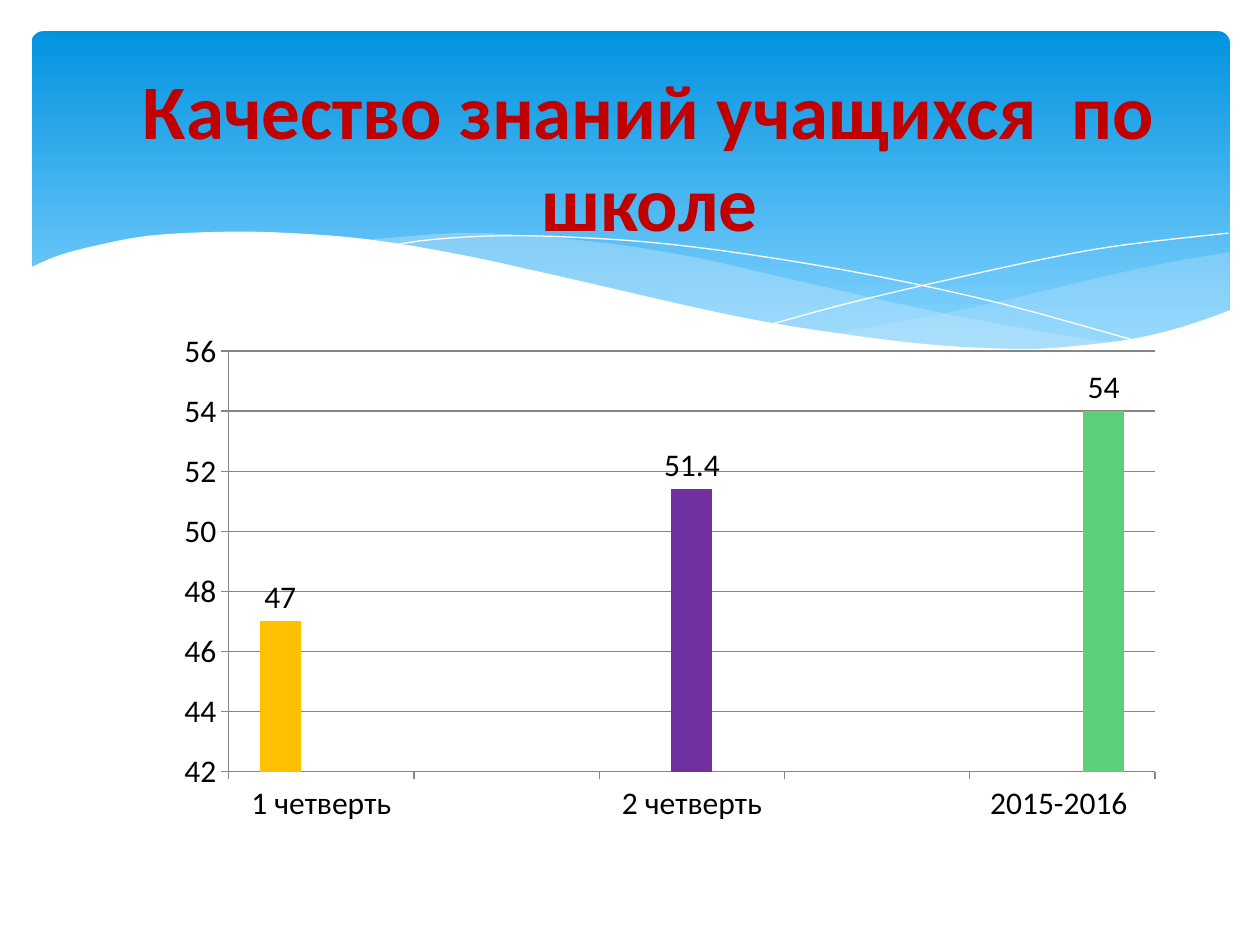
import pptx
import pptx.util
import pptx.chart.data
import pptx.dml.color
import pptx.enum.chart
import pptx.enum.shapes
import pptx.enum.text
import pptx.oxml.ns
import lxml.etree

W, H = pptx.util.Inches(10), pptx.util.Inches(7.5)
FONT = "Calibri"


def paint(fill, color, alpha=100):
    fill.solid()
    fill.fore_color.rgb = pptx.dml.color.RGBColor.from_string(color)
    if alpha < 100:
        clr = fill._xPr.find(".//" + pptx.oxml.ns.qn("a:srgbClr"))
        lxml.etree.SubElement(clr, pptx.oxml.ns.qn("a:alpha"), val=str(alpha * 1000))


def write(tf, text, size, color, bold=False, align="CENTER"):
    tf.word_wrap = True
    tf.vertical_anchor = pptx.enum.text.MSO_ANCHOR.MIDDLE
    p = tf.paragraphs[0]
    p.alignment = getattr(pptx.enum.text.PP_ALIGN, align)
    r = p.add_run()
    r.text = text
    r.font.name, r.font.size, r.font.bold = FONT, pptx.util.Pt(size), bold
    paint(r.font.fill, color)


prs = pptx.Presentation()
prs.slide_width, prs.slide_height = W, H
s = prs.slides.add_slide(prs.slide_layouts[5])

# Blue header panel
panel = s.shapes.add_shape(pptx.enum.shapes.MSO_SHAPE.ROUNDED_RECTANGLE,
                           int(W * 0.025), int(H * 0.033), int(W * 0.951), int(H * 0.36))
panel.adjustments[0] = 0.034
panel.shadow.inherit = False
panel.line.fill.background()
panel.fill.gradient()
panel.fill.gradient_angle = 270
for stop, (pos, color) in zip(panel.fill.gradient_stops, [(0, "0293E0"), (0.9, "83D3FE")]):
    stop.position = pos
    stop.color.rgb = pptx.dml.color.RGBColor.from_string(color)

# Waves: curves through knots in inches, joined end to end; (colour, opacity, closed, curves)
waves = [
    ("C6E7FC", 29, True, [
        [(9.76, 2), (9.35, 2.07), (8.91, 2.16), (8.32, 2.3), (7.53, 2.48), (6.61, 2.65)],
        [(6.61, 2.65), (7.05, 2.71), (7.57, 2.76), (8.14, 2.78), (8.63, 2.75), (9.05, 2.69),
         (9.42, 2.59), (9.76, 2.47)]]),
    ("C6E7FC", 40, True, [
        [(8.93, 2.73), (8.37, 2.65), (7.41, 2.47), (6.29, 2.22), (5.55, 2.05), (4.89, 1.94),
         (4.2, 1.87), (3.61, 1.85), (2.86, 1.91)],
        [(2.86, 1.91), (3.42, 1.99), (4.04, 2.11), (4.91, 2.32), (5.66, 2.48), (6.34, 2.61),
         (6.95, 2.7), (7.48, 2.76), (7.96, 2.78), (8.48, 2.77), (8.93, 2.73)]]),
    ("FFFFFF", 100, False, [
        [(3.09, 1.95), (3.44, 1.9), (4.01, 1.87), (4.69, 1.89), (5.33, 1.94), (6.08, 2.04),
         (6.95, 2.19), (7.95, 2.41), (9.07, 2.72)]]),
    ("FFFFFF", 100, False, [
        [(6.13, 2.57), (6.72, 2.41), (7.48, 2.23), (8.36, 2.04), (8.95, 1.94), (9.75, 1.85)]]),
    ("FFFFFF", 100, True, [
        [(9.77, 2.46), (9.4, 2.59), (8.99, 2.69), (8.5, 2.75), (8.09, 2.77), (7.44, 2.74),
         (6.68, 2.65), (5.79, 2.5), (4.47, 2.2), (3.65, 2.02), (2.92, 1.9), (2.3, 1.85),
         (1.77, 1.84), (1.19, 1.87), (0.76, 1.95), (0.46, 2.03), (0.23, 2.13)],
        [(0.23, 3.29), (9.77, 3.29)]]),
]
for color, alpha, closed, curves in waves:
    pts = []
    for knots in curves:
        ext = [knots[0]] + knots + [knots[-1]]
        for a, b, c, d in zip(ext, ext[1:], ext[2:], ext[3:]):
            for t in (0, 0.25, 0.5, 0.75):  # Catmull-Rom spline
                pts.append([int(pptx.util.Inches(
                    q + t / 2 * (r - p + t * (2 * p - 5 * q + 4 * r - u
                                              + t * (3 * q - 3 * r + u - p)))))
                    for p, q, r, u in zip(a, b, c, d)])
        pts.append([int(pptx.util.Inches(v)) for v in knots[-1]])
    fb = s.shapes.build_freeform(*pts[0])
    fb.add_line_segments(pts[1:], close=closed)
    sp = fb.convert_to_shape()
    sp.shadow.inherit = False
    if closed:
        paint(sp.fill, color, alpha)
        sp.line.fill.background()
    else:
        sp.fill.background()
        paint(sp.line.fill, color)
        sp.line.width = 0

# Column chart: one series for each period
data = pptx.chart.data.CategoryChartData()
data.categories = ["1 четверть", "", "2 четверть", "", "2015-2016 "]
data.add_series("Series 1", [47, None, None, None, None])
data.add_series("Series 2", [None, None, 51.4, None, None])
data.add_series("Series 3", [None, None, None, None, 54])
chart = s.shapes.add_chart(pptx.enum.chart.XL_CHART_TYPE.COLUMN_CLUSTERED,
                           int(W * 0.125), int(H * 0.28), int(W * 0.808), int(H * 0.61), data).chart
chart.has_legend = chart.has_title = False
chart.font.name, chart.font.size = FONT, pptx.util.Pt(18)
paint(chart.font.fill, "000000")
plot = chart.plots[0]
plot.gap_width, plot.overlap, plot.vary_by_categories = 150, 0, False
for ser, color in zip(plot.series, ["FFC000", "7030A0", "5BD078"]):
    paint(ser.format.fill, color)
    ser.data_labels.show_value = True
    ser.data_labels.position = pptx.enum.chart.XL_LABEL_POSITION.OUTSIDE_END

# Axes and gridlines
val = chart.value_axis
val.minimum_scale, val.maximum_scale, val.major_unit = 42, 56, 2
val.has_major_gridlines = True
for axis in (val, chart.category_axis):
    axis.major_tick_mark = pptx.enum.chart.XL_TICK_MARK.OUTSIDE
for part in (val, chart.category_axis, val.major_gridlines):
    paint(part.format.line.fill, "868686")
    part.format.line.width = pptx.util.Pt(0.75)

# Fixed inner plot area
area = chart._chartSpace.chart.plotArea
for old in area.findall(pptx.oxml.ns.qn("c:layout")):
    area.remove(old)
layout = lxml.etree.Element(pptx.oxml.ns.qn("c:layout"))
manual = lxml.etree.SubElement(layout, pptx.oxml.ns.qn("c:manualLayout"))
for tag, v in [("layoutTarget", "inner"), ("xMode", "edge"), ("yMode", "edge"),
               ("x", "0.07"), ("y", "0.15"), ("w", "0.91"), ("h", "0.73")]:
    lxml.etree.SubElement(manual, pptx.oxml.ns.qn("c:" + tag), val=v)
area.insert(0, layout)

# Title, in front of the panel
title = s.shapes.title
title.left, title.top = int(W * 0.059), int(H * 0.059)
title.width, title.height = int(W * 0.913), int(H * 0.21)
write(title.text_frame, "Качество знаний учащихся  по школе", 44, "C00000", bold=True)
s.shapes._spTree.append(title._element)

prs.save("out.pptx")
